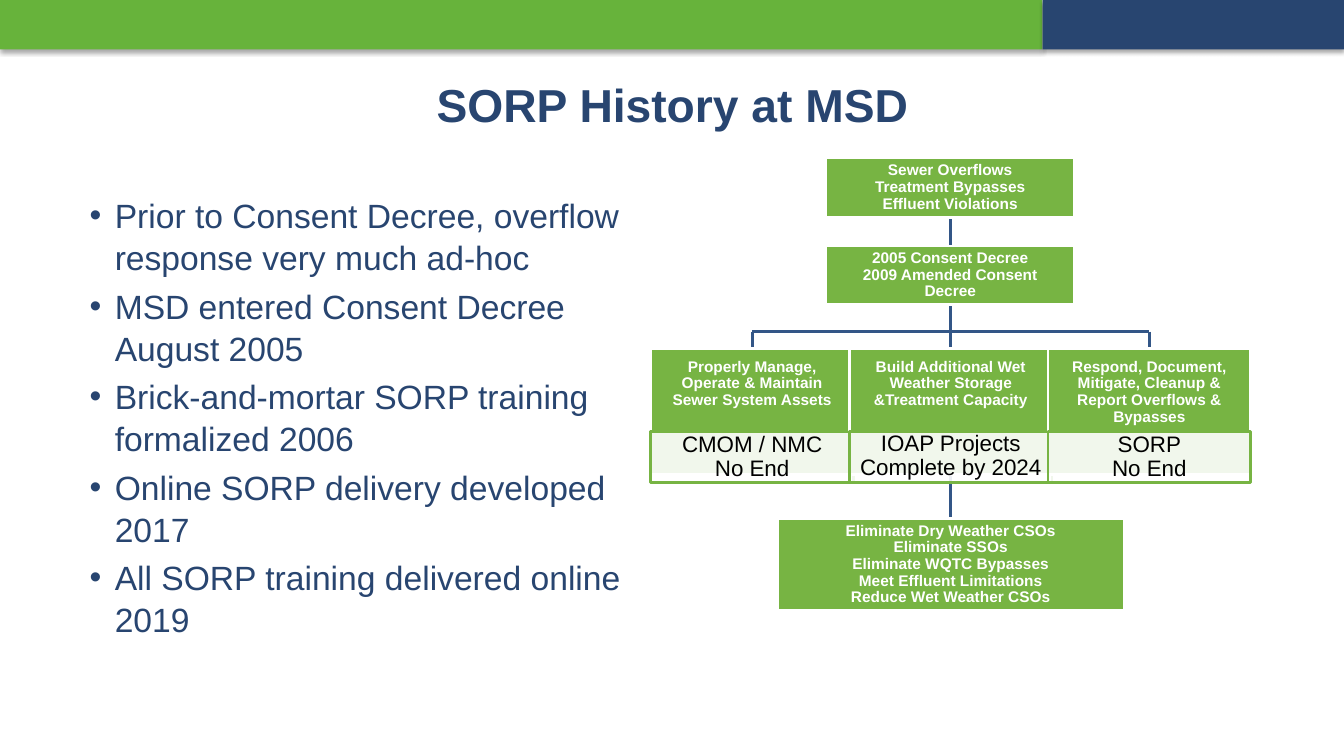
from dataclasses import dataclass

import lxml.etree
import pptx
import pptx.dml.color
import pptx.enum.shapes
import pptx.enum.text
import pptx.oxml.ns
import pptx.util

Inches = pptx.util.Inches
Pt = pptx.util.Pt
qn = pptx.oxml.ns.qn
ALIGN = pptx.enum.text.PP_ALIGN
ANCHOR = pptx.enum.text.MSO_ANCHOR

FONT = "Arial"
COLORS = {
    "banner": "67B33B",
    "navy": "284570",
    "box": "77B443",
    "link": "335687",
    "white": "FFFFFF",
    "black": "000000",
}


@dataclass
class Box:
    left: float
    top: float
    width: float
    height: float
    text: str
    anchor: ANCHOR = ANCHOR.MIDDLE


@dataclass
class Style:
    fill: str
    line: str
    color: str
    size: int
    bold: bool
    inset_x: float
    inset_y: float
    opacity: int = 100


@dataclass
class Program:
    goal: str
    outcome: str
    outcome_anchor: ANCHOR = ANCHOR.MIDDLE


@dataclass
class Link:
    x1: float
    y1: float
    x2: float
    y2: float


GOAL_STYLE = Style("box", "white", "white", 11, True, 0.1, 0.1)
OUTCOME_STYLE = Style("white", "box", "black", 16, False, 0.04, 0.01, 90)

CENTER = 9.43
COLUMN_STEP = 1.97
COLUMN_WIDTH = 2.01
COLUMN_CENTERS = [CENTER + COLUMN_STEP * step for step in (-1, 0, 1)]
BUS_Y = 3.29
PROGRAM_TOP = 3.46

CAUSES = [
    Box(8.19, 1.56, 2.47, 0.6,
        "Sewer Overflows\vTreatment Bypasses\vEffluent Violations"),
    Box(8.19, 2.44, 2.47, 0.58,
        "2005 Consent Decree\v2009 Amended Consent Decree"),
]
PROGRAMS = [
    Program("Properly Manage, Operate & Maintain Sewer System Assets",
            "CMOM / NMC\vNo End"),
    Program("Build Additional Wet Weather Storage &Treatment Capacity",
            "IOAP Projects\vComplete by 2024", ANCHOR.TOP),
    Program("Respond, Document, Mitigate, Cleanup & Report Overflows & Bypasses",
            "SORP\vNo End"),
]
RESULTS = Box(7.71, 5.14, 3.44, 0.92,
              "Eliminate Dry Weather CSOs\vEliminate SSOs\vEliminate WQTC Bypasses"
              "\vMeet Effluent Limitations\vReduce Wet Weather CSOs")
LINKS = [
    Link(CENTER, 2.1, CENTER, 2.54),
    Link(CENTER, 3.03, CENTER, PROGRAM_TOP),
    Link(COLUMN_CENTERS[0], BUS_Y, COLUMN_CENTERS[2], BUS_Y),
    Link(COLUMN_CENTERS[0], BUS_Y, COLUMN_CENTERS[0], PROGRAM_TOP),
    Link(COLUMN_CENTERS[2], BUS_Y, COLUMN_CENTERS[2], PROGRAM_TOP),
    Link(CENTER, 4.71, CENTER, 5.15),
]
HISTORY = [
    "Prior to Consent Decree, overflow response very much ad-hoc",
    "MSD entered Consent Decree August 2005",
    "Brick-and-mortar SORP training formalized 2006",
    "Online SORP delivery developed 2017",
    "All SORP training delivered online 2019",
]


def rgb(name: str) -> pptx.dml.color.RGBColor:
    return pptx.dml.color.RGBColor.from_string(COLORS[name])


def set_font(paragraph, size: int, color: str, bold: bool = False) -> None:
    for run in paragraph.runs:
        run.font.name = FONT
        run.font.size = Pt(size)
        run.font.bold = bold
        run.font.color.rgb = rgb(color)


def add_rectangle(slide, left: float, top: float, width: float, height: float, fill: str):
    rectangle = slide.shapes.add_shape(
        pptx.enum.shapes.MSO_SHAPE.RECTANGLE,
        Inches(left), Inches(top), Inches(width), Inches(height))
    rectangle.shadow.inherit = False
    rectangle.fill.solid()
    rectangle.fill.fore_color.rgb = rgb(fill)
    return rectangle


def add_banner(slide, left: float, width: float, fill: str) -> None:
    banner = add_rectangle(slide, left, 0, width, 0.49, fill)
    banner.line.fill.background()
    effects = banner._element.spPr.find(qn("a:effectLst"))
    shadow = lxml.etree.SubElement(
        effects, qn("a:outerShdw"), blurRad=str(Pt(3.1)), dist=str(Pt(1.8)),
        dir="5400000", algn="t", rotWithShape="0")
    tint = lxml.etree.SubElement(shadow, qn("a:srgbClr"), val=COLORS["black"])
    lxml.etree.SubElement(tint, qn("a:alpha"), val="35000")


def add_box(slide, box: Box, style: Style) -> None:
    shape = add_rectangle(slide, box.left, box.top, box.width, box.height, style.fill)
    shape.line.color.rgb = rgb(style.line)
    shape.line.width = Pt(2)
    if style.opacity < 100:
        tint = shape._element.spPr.find(qn("a:solidFill")).find(qn("a:srgbClr"))
        lxml.etree.SubElement(tint, qn("a:alpha"), val=str(style.opacity * 1000))
    frame = shape.text_frame
    frame.word_wrap = True
    frame.vertical_anchor = box.anchor
    frame.margin_left = frame.margin_right = Inches(style.inset_x)
    frame.margin_top = frame.margin_bottom = Inches(style.inset_y)
    frame.text = box.text
    paragraph = frame.paragraphs[0]
    paragraph.alignment = ALIGN.CENTER
    paragraph.line_spacing = 0.9
    set_font(paragraph, style.size, style.color, style.bold)


def add_link(slide, link: Link) -> None:
    connector = slide.shapes.add_connector(
        pptx.enum.shapes.MSO_CONNECTOR.STRAIGHT,
        Inches(link.x1), Inches(link.y1), Inches(link.x2), Inches(link.y2))
    connector.line.color.rgb = rgb("link")
    connector.line.width = Pt(2)
    lxml.etree.SubElement(connector._element.spPr, qn("a:effectLst"))


def add_title(slide, text: str) -> None:
    title = slide.shapes.title
    title.left, title.top = Inches(0.67), Inches(0.5)
    title.width, title.height = Inches(12), Inches(1.06)
    title.text_frame.text = text
    title.text_frame.vertical_anchor = ANCHOR.MIDDLE
    heading = title.text_frame.paragraphs[0]
    heading.alignment = ALIGN.CENTER
    set_font(heading, 33, "navy", True)


def add_history(slide, milestones: list[str]) -> None:
    frame = slide.shapes.add_textbox(
        Inches(0.67), Inches(1.87), Inches(6.1), Inches(5.02)).text_frame
    frame.word_wrap = True
    frame.text = "\n".join(milestones)
    for index, paragraph in enumerate(frame.paragraphs):
        properties = paragraph._p.get_or_add_pPr()
        properties.set("marL", str(Inches(0.37)))
        properties.set("indent", str(Inches(-0.25)))
        lxml.etree.SubElement(properties, qn("a:buFont"), typeface=FONT)
        lxml.etree.SubElement(properties, qn("a:buChar"), char="•")
        paragraph.line_spacing = 1.04
        if index:
            paragraph.space_before = Pt(4.8)
        set_font(paragraph, 24, "navy")


def main() -> None:
    presentation = pptx.Presentation()
    presentation.slide_width = Inches(13.33)
    presentation.slide_height = Inches(7.5)
    slide = presentation.slides.add_slide(presentation.slide_layouts[5])
    add_banner(slide, 0, 10.34, "banner")
    add_banner(slide, 10.34, 2.99, "navy")
    add_title(slide, "SORP History at MSD")
    add_history(slide, HISTORY)
    for link in LINKS:
        add_link(slide, link)
    for cause in CAUSES:
        add_box(slide, cause, GOAL_STYLE)
    for center, program in zip(COLUMN_CENTERS, PROGRAMS):
        left = center - COLUMN_WIDTH / 2
        add_box(slide, Box(left, PROGRAM_TOP, COLUMN_WIDTH, 1.25, program.goal, ANCHOR.TOP),
                GOAL_STYLE)
        add_box(slide, Box(left, 4.28, COLUMN_WIDTH, 0.51, program.outcome,
                           program.outcome_anchor), OUTCOME_STYLE)
    add_box(slide, RESULTS, GOAL_STYLE)
    presentation.save("out.pptx")


if __name__ == "__main__":
    main()
